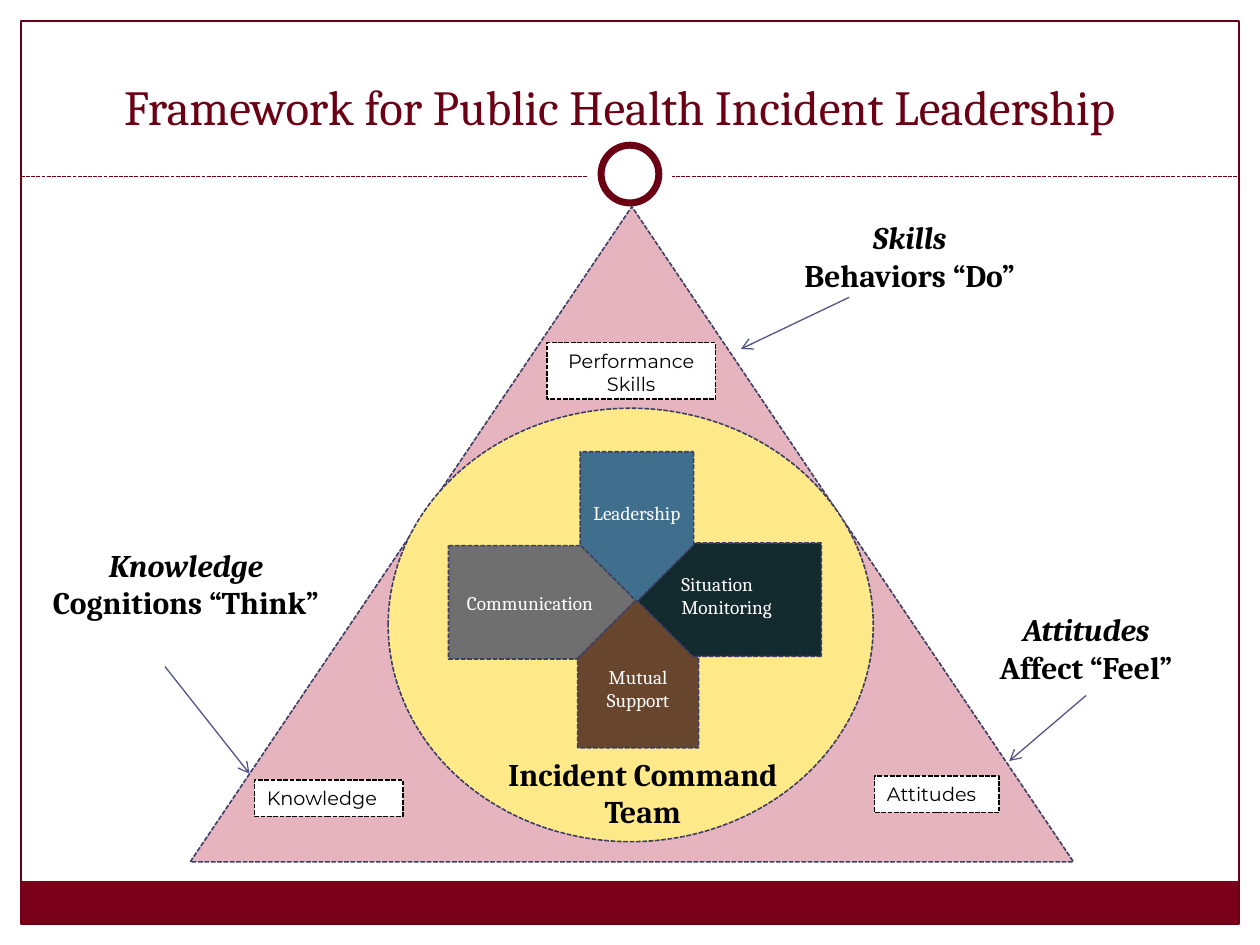
from lxml import etree
from pptx import Presentation
from pptx.dml.color import RGBColor
from pptx.enum.dml import MSO_LINE
from pptx.enum.shapes import MSO_CONNECTOR, MSO_SHAPE
from pptx.enum.text import MSO_ANCHOR, PP_ALIGN
from pptx.oxml.ns import qn
from pptx.util import Pt

WHITE = RGBColor(0xFF, 0xFF, 0xFF)
BLACK = RGBColor(0x00, 0x00, 0x00)
MAROON = RGBColor(0x6B, 0x00, 0x15)
BAND_RED = RGBColor(0x79, 0x00, 0x18)
PINK = RGBColor(0xE6, 0xB4, 0xBE)
YELLOW = RGBColor(0xFF, 0xE9, 0x89)
OUTLINE = RGBColor(0x3D, 0x3E, 0x66)
ARROW = RGBColor(0x53, 0x54, 0x8A)
GRAY = RGBColor(0x6F, 0x6F, 0x6F)
BROWN = RGBColor(0x68, 0x46, 0x2E)
DARK_TEAL = RGBColor(0x13, 0x2A, 0x2F)
BLUE = RGBColor(0x40, 0x6F, 0x8D)

deck = Presentation()
deck.slide_width, deck.slide_height = Pt(720), Pt(540)
slide = deck.slides.add_slide(deck.slide_layouts[5])
shapes = slide.shapes


def draw(kind, place, fill=None, line=OUTLINE, weight=0.9, dash=MSO_LINE.SQUARE_DOT):
    shape = shapes.add_shape(kind, *[Pt(length) for length in place])
    shape.shadow.inherit = False
    if fill is None:
        shape.fill.background()
    else:
        shape.fill.solid()
        shape.fill.fore_color.rgb = fill
    if line is None:
        shape.line.fill.background()
    else:
        shape.line.color.rgb = line
        shape.line.width = Pt(weight)
        shape.line.dash_style = dash
    return shape


def write(shape, text, size, color, font="Cambria", align=PP_ALIGN.CENTER,
          anchor=MSO_ANCHOR.TOP, bold=False):
    frame = shape.text_frame
    frame.text = text
    frame.word_wrap = True
    frame.vertical_anchor = anchor
    for para in frame.paragraphs:
        para.alignment = align
        for span in para.runs:
            span.font.name = font
            span.font.size = Pt(size)
            span.font.bold = bold
            span.font.color.rgb = color


# Slide frame, bottom band and title divider
draw(MSO_SHAPE.RECTANGLE, (12, 503.5, 696, 24.5), BAND_RED, None)
draw(MSO_SHAPE.RECTANGLE, (12, 12, 696, 516), None, MAROON, 0.75, MSO_LINE.SOLID)
divider = shapes.add_connector(MSO_CONNECTOR.STRAIGHT, Pt(12), Pt(100.8), Pt(708), Pt(100.8))
divider.line.color.rgb = MAROON
divider.line.width = Pt(0.75)
divider.line.dash_style = MSO_LINE.SQUARE_DOT
etree.SubElement(divider.element.spPr, qn("a:effectLst"))
draw(MSO_SHAPE.OVAL, (336, 75.5, 48, 48), WHITE, None)
draw(MSO_SHAPE.OVAL, (343.5, 83, 33, 33), WHITE, MAROON, 4, MSO_LINE.SOLID)

title = shapes.title
title.left, title.top, title.width, title.height = Pt(12), Pt(20), Pt(684), Pt(61.2)
write(title, "Framework for Public Health Incident Leadership", 28, MAROON,
      anchor=MSO_ANCHOR.BOTTOM)

# Triangle with the team circle
draw(MSO_SHAPE.ISOSCELES_TRIANGLE, (108.7, 118.1, 504.7, 374.4), PINK)
draw(MSO_SHAPE.OVAL, (221.8, 233.3, 277.2, 247.7), YELLOW)

# Four plates pointing at the centre; the text direction undoes the rotation
plates = [
    ("Communication", (256.3, 311.8, 109.4, 64.8), GRAY, 0, "horz"),
    ("Mutual Support", (321.8, 349.9, 85.7, 69.1), BROWN, 270, "vert"),
    ("", (363.6, 310.3, 105.8, 64.8), DARK_TEAL, 180, "horz"),
    ("Leadership", (321.1, 268.6, 85.7, 64.8), BLUE, 90, "vert270"),
]
for text, place, color, rotation, direction in plates:
    plate = draw(MSO_SHAPE.PENTAGON, place, color)
    plate.rotation = rotation
    if text:
        write(plate, text, 11, WHITE, anchor=MSO_ANCHOR.MIDDLE)
        frame = plate.text_frame
        frame.margin_left = frame.margin_right = Pt(3.6)
        frame.margin_top = frame.margin_bottom = Pt(3.6)
        plate.element.txBody.find(qn("a:bodyPr")).set("vert", direction)

situation = shapes.add_textbox(Pt(382.3), Pt(323.3), Pt(90.7), Pt(36.7))
write(situation, "Situation Monitoring", 11, WHITE, align=PP_ALIGN.LEFT)
team = shapes.add_textbox(Pt(278), Pt(427.7), Pt(178.6), Pt(28))
write(team, "Incident Command Team", 18, BLACK, bold=True)

# Each corner: heading outside, arrow to the triangle, label inside
corners = [
    ("Attitudes\nAffect “Feel”", (536.4, 345, 168.5, 52.4), (620.6, 397.4, 576.7, 434.9),
     "Attitudes", (499.7, 443.5, 71.3, 20.9), PP_ALIGN.LEFT),
    ("Knowledge\nCognitions “Think”", (16.6, 308.2, 179.3, 72.7), (94.3, 380.9, 142.6, 442.1),
     "Knowledge", (145.4, 445.7, 85, 20.9), PP_ALIGN.LEFT),
    ("Skills\nBehaviors “Do”", (450.7, 121, 138.2, 72.7), (485.3, 169.9, 423.4, 199.4),
     "Performance Skills", (312.5, 195.8, 96.5, 32.4), PP_ALIGN.CENTER),
]
for heading, heading_place, ends, label, label_place, align in corners:
    box = shapes.add_textbox(*[Pt(length) for length in heading_place])
    write(box, heading, 18, BLACK, bold=True)
    box.text_frame.paragraphs[0].runs[0].font.italic = True

    arrow = shapes.add_connector(MSO_CONNECTOR.STRAIGHT, *[Pt(length) for length in ends])
    arrow.line.color.rgb = ARROW
    arrow.line.width = Pt(0.75)
    etree.SubElement(arrow.line._get_or_add_ln(), qn("a:tailEnd"), type="arrow")
    etree.SubElement(arrow.element.spPr, qn("a:effectLst"))
    if label == "Attitudes":
        arrow.begin_connect(box, 2)

    label_box = draw(MSO_SHAPE.RECTANGLE, label_place, WHITE, BLACK)
    write(label_box, label, 11, BLACK, "Montserrat", align)

deck.save("out.pptx")
